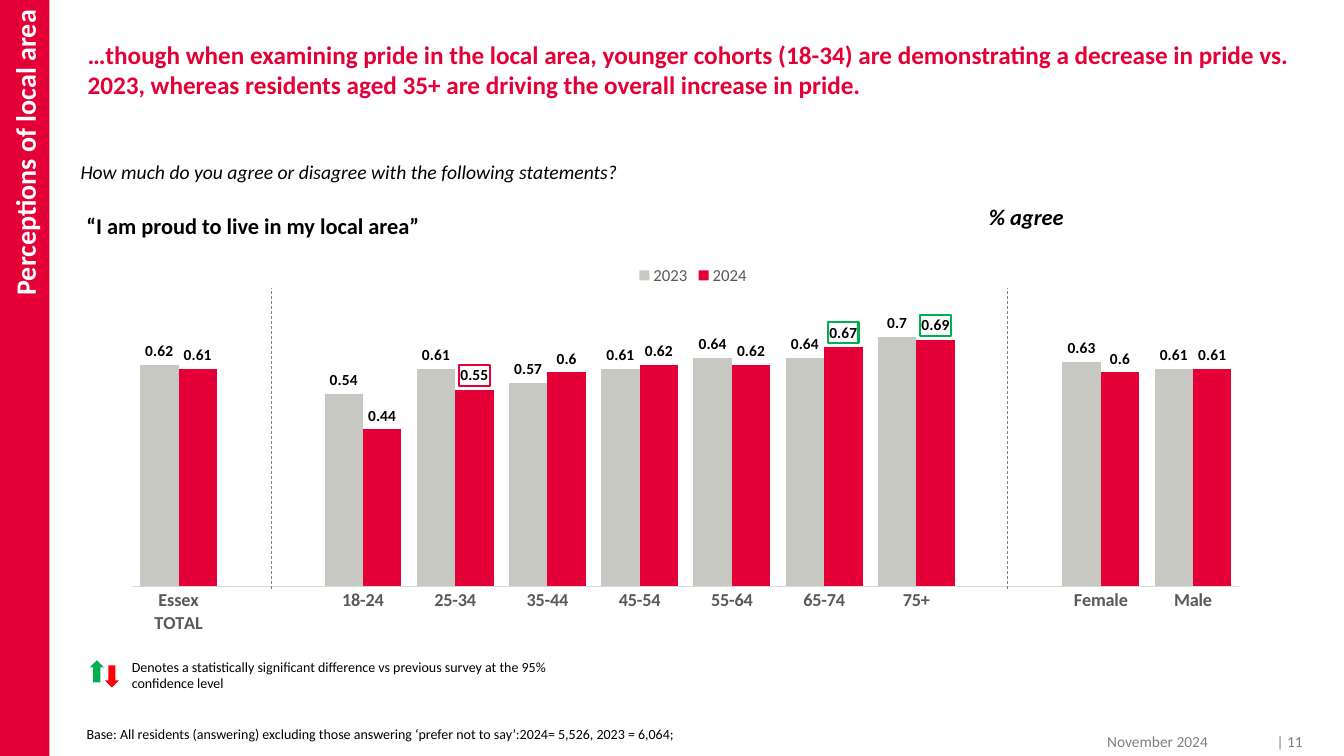
from dataclasses import dataclass

from lxml import etree
from pptx import Presentation
from pptx.chart.data import CategoryChartData
from pptx.dml.color import RGBColor
from pptx.enum.chart import XL_CHART_TYPE, XL_LABEL_POSITION, XL_LEGEND_POSITION, XL_TICK_MARK
from pptx.enum.dml import MSO_LINE
from pptx.enum.shapes import MSO_CONNECTOR, MSO_SHAPE
from pptx.enum.text import MSO_ANCHOR, MSO_AUTO_SIZE, PP_ALIGN
from pptx.oxml import parse_xml
from pptx.oxml.ns import nsdecls, qn
from pptx.util import Inches, Pt

COLUMNS = XL_CHART_TYPE.COLUMN_CLUSTERED
OUTSIDE = XL_LABEL_POSITION.OUTSIDE_END
TOP = XL_LEGEND_POSITION.TOP
NO_TICK = XL_TICK_MARK.NONE
DASH = MSO_LINE.DASH
STRAIGHT = MSO_CONNECTOR.STRAIGHT
RECT, UP, DOWN = MSO_SHAPE.RECTANGLE, MSO_SHAPE.UP_ARROW, MSO_SHAPE.DOWN_ARROW
MIDDLE = MSO_ANCHOR.MIDDLE
GROW = MSO_AUTO_SIZE.SHAPE_TO_FIT_TEXT
LEFT, RIGHT = PP_ALIGN.LEFT, PP_ALIGN.RIGHT


@dataclass(frozen=True)
class Theme:
    font: str = "Calibri"
    brand: str = "E40037"
    previous: str = "C8C8C3"
    up: str = "00B050"
    down: str = "FF0000"
    ink: str = "000000"
    white: str = "FFFFFF"
    axis_text: str = "595959"
    axis_line: str = "D9D9D9"
    divider: str = "7F7F7F"
    footer: str = "808080"
    banner_size: int = 20
    title_size: int = 18
    heading_size: int = 16
    question_size: int = 14
    category_size: int = 13
    legend_size: int = 12
    label_size: int = 11
    note_size: int = 10


THEME = Theme()


@dataclass(frozen=True)
class Box:
    left: float
    top: float
    width: float
    height: float

    def lengths(self) -> tuple:
        return tuple(Inches(n) for n in (self.left, self.top, self.width, self.height))


@dataclass(frozen=True)
class TextItem:
    text: str
    box: Box
    size: int
    color: str = THEME.ink
    bold: bool = False
    italic: bool = False
    align: PP_ALIGN = LEFT
    before: int = 0
    grow: bool = True


@dataclass(frozen=True)
class Significance:
    category: str
    color: str


TEXTS = (
    TextItem("…though when examining pride in the local area, younger cohorts (18-34) are "
             "demonstrating a decrease in pride vs. 2023, whereas residents aged 35+ are "
             "driving the overall increase in pride.",
             Box(0.77, 0.34, 12.25, 1.18), THEME.title_size, THEME.brand, bold=True, grow=False),
    TextItem("How much do you agree or disagree with the following statements?",
             Box(0.7, 1.54, 12.35, 0.34), THEME.question_size, italic=True),
    TextItem("“I am proud to live in my local area”",
             Box(0.76, 2.06, 6.67, 0.37), THEME.heading_size, bold=True),
    TextItem("% agree", Box(9.71, 1.97, 3.42, 0.37), THEME.heading_size,
             bold=True, italic=True, before=6),
    TextItem("Denotes a statistically significant difference vs previous survey at the 95% "
             "confidence level", Box(1.21, 6.48, 4.33, 0.44), THEME.note_size),
    TextItem("Base: All residents (answering) excluding those answering ‘prefer not to say’:"
             "2024= 5,526, 2023 = 6,064;", Box(0.76, 7.15, 6.38, 0.27), THEME.note_size),
    TextItem("November 2024", Box(9.68, 7.21, 2.4, 0.15), THEME.label_size, THEME.footer,
             align=RIGHT, grow=False),
    TextItem("| 11", Box(12.17, 7.21, 0.85, 0.15), THEME.label_size, THEME.footer,
             align=RIGHT, grow=False),
)

CATEGORIES = ("Essex TOTAL", "", "18-24", "25-34", "35-44", "45-54", "55-64", "65-74", "75+",
              "", "Female", "Male")
AGREE = {
    "2023": (0.62, None, 0.54, 0.61, 0.57, 0.61, 0.64, 0.64, 0.7, None, 0.63, 0.61),
    "2024": (0.61, None, 0.44, 0.55, 0.6, 0.62, 0.62, 0.67, 0.69, None, 0.6, 0.61),
}
CHANGES = (Significance("25-34", THEME.brand), Significance("65-74", THEME.up),
           Significance("75+", THEME.up))


def set_font(font, size: int, color: str, bold: bool = False, italic: bool = False) -> None:
    font.name, font.size = THEME.font, Pt(size)
    font.bold, font.italic = bold, italic
    font.color.rgb = RGBColor.from_string(color)


def write(tf, text: str, *, size: int, color: str, bold: bool = False, italic: bool = False,
          align: PP_ALIGN = LEFT, before: int = 0) -> None:
    tf.word_wrap = True
    p = tf.paragraphs[0]
    p.alignment, p.space_before = align, Pt(before)
    r = p.add_run()
    r.text = text
    set_font(r.font, size, color, bold, italic)


def add_text(s, item: TextItem) -> None:
    tf = s.shapes.add_textbox(*item.box.lengths()).text_frame
    write(tf, item.text, size=item.size, color=item.color, bold=item.bold, italic=item.italic,
          align=item.align, before=item.before)
    if item.grow:
        tf.auto_size = GROW


def add_filled(s, kind: MSO_SHAPE, box: Box, color: str):
    sp = s.shapes.add_shape(kind, *box.lengths())
    sp.shadow.inherit = False
    sp.fill.solid()
    sp.fill.fore_color.rgb = RGBColor.from_string(color)
    sp.line.fill.background()
    return sp


def add_banner(s) -> None:
    tf = add_filled(s, RECT, Box(0, 0, 0.49, 7.5), THEME.brand).text_frame
    write(tf, "Perceptions of local area", size=THEME.banner_size, color=THEME.white,
          bold=True, align=RIGHT)
    tf.vertical_anchor = MIDDLE
    tf.margin_top = Inches(0.1)
    tf._txBody.bodyPr.set("vert", "vert270")


def add_divider(s, x: float) -> None:
    line = s.shapes.add_connector(STRAIGHT, Inches(x), Inches(5.84), Inches(x), Inches(2.86))
    line.line.color.rgb = RGBColor.from_string(THEME.divider)
    line.line.width, line.line.dash_style = Pt(0.5), DASH
    etree.SubElement(line._element.spPr, qn("a:effectLst"))


def set_plot_area(chart, x: float, y: float, w: float, h: float) -> None:
    """Fix the inner plot area, given as fractions of the chart."""
    area = chart._chartSpace.chart.plotArea
    for old in area.findall(qn("c:layout")):
        area.remove(old)
    places = "".join(f'<c:{k} val="{v}"/>' for k, v in zip("xywh", (x, y, w, h)))
    area.insert(0, parse_xml(
        f'<c:layout {nsdecls("c")}><c:manualLayout><c:layoutTarget val="inner"/>'
        f'<c:xMode val="edge"/><c:yMode val="edge"/>{places}</c:manualLayout></c:layout>'))


def outline_labels(series) -> None:
    """Frame the labels of significant changes."""
    for change in CHANGES:
        label = series.points[CATEGORIES.index(change.category)].data_label
        set_font(label.font, THEME.label_size, THEME.ink, bold=True)
        label.position = OUTSIDE
    for change, tx_pr in zip(CHANGES, series.data_labels._element.xpath("c:dLbl/c:txPr")):
        for old in tx_pr.getparent().findall(qn("c:spPr")):
            tx_pr.getparent().remove(old)
        tx_pr.addprevious(parse_xml(
            f'<c:spPr {nsdecls("c", "a")}><a:noFill/><a:ln w="{Pt(1.5)}"><a:solidFill>'
            f'<a:srgbClr val="{change.color}"/></a:solidFill></a:ln></c:spPr>'))


def add_agreement_chart(s) -> None:
    data = CategoryChartData()
    data.categories = CATEGORIES
    for year, values in AGREE.items():
        data.add_series(year, values)
    chart = s.shapes.add_chart(COLUMNS, *Box(1.28, 2.52, 11.19, 4.05).lengths(), data).chart
    set_font(chart.font, THEME.note_size, THEME.ink)
    chart.has_title = False
    chart.has_legend = True
    chart.legend.position, chart.legend.include_in_layout = TOP, False
    set_font(chart.legend.font, THEME.legend_size, THEME.axis_text)

    values, cats = chart.value_axis, chart.category_axis
    values.minimum_scale, values.maximum_scale = 0, 0.8
    values.has_major_gridlines = values.visible = False
    cats.major_tick_mark = NO_TICK
    cats.format.line.color.rgb = RGBColor.from_string(THEME.axis_line)
    cats.format.line.width = Pt(0.75)
    set_font(cats.tick_labels.font, THEME.category_size, THEME.axis_text, bold=True)

    plot = chart.plots[0]
    plot.gap_width, plot.overlap, plot.vary_by_categories = 40, 0, False
    for series, color in zip(plot.series, (THEME.previous, THEME.brand)):
        series.format.fill.solid()
        series.format.fill.fore_color.rgb = RGBColor.from_string(color)
        labels = series.data_labels
        labels.show_value, labels.position = True, OUTSIDE
        set_font(labels.font, THEME.label_size, THEME.ink, bold=True)
    outline_labels(plot.series[1])
    set_plot_area(chart, 0.003, 0.115, 0.981, 0.699)


def main() -> None:
    prs = Presentation()
    prs.slide_width, prs.slide_height = Inches(13.33), Inches(7.5)
    s = prs.slides.add_slide(prs.slide_layouts[6])
    add_banner(s)
    add_agreement_chart(s)
    for x in (2.69, 9.99):
        add_divider(s, x)
    add_filled(s, UP, Box(0.89, 6.55, 0.14, 0.22), THEME.up)
    add_filled(s, DOWN, Box(1.04, 6.6, 0.14, 0.22), THEME.down)
    for item in TEXTS:
        add_text(s, item)
    prs.save("out.pptx")


if __name__ == "__main__":
    main()
